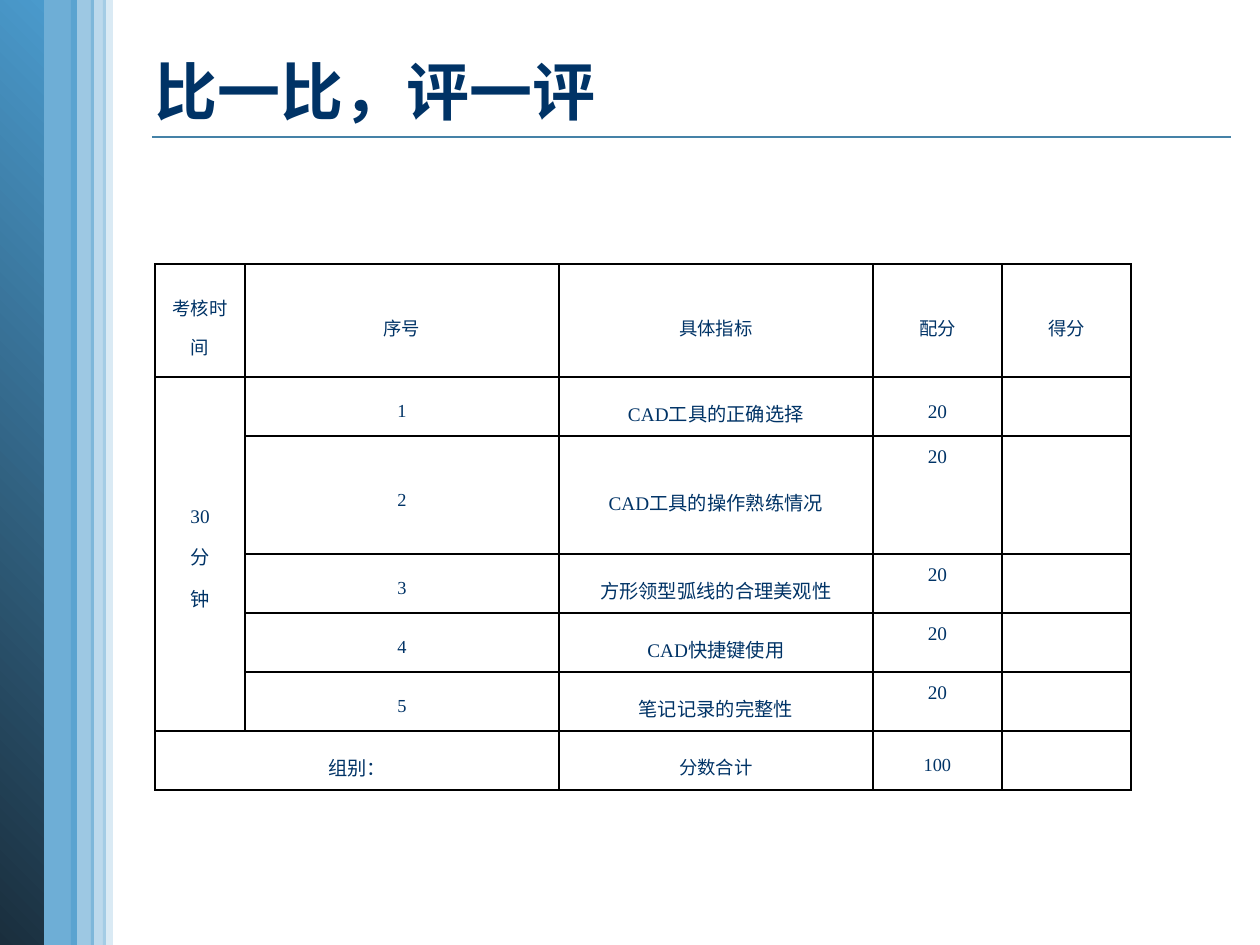
from lxml.etree import SubElement
from pptx import Presentation
from pptx.dml.color import RGBColor
from pptx.enum.shapes import MSO_CONNECTOR, MSO_SHAPE
from pptx.enum.text import MSO_ANCHOR, MSO_AUTO_SIZE, PP_ALIGN
from pptx.oxml.ns import qn
from pptx.util import Pt

EMU_PER_PX = 914400 / 126
COLORS = {"text": "003366", "blue": "4A9ACC", "dark": "1A2E3D",
          "rule": "4582A7", "border": "000000", "cell": "FFFFFF"}


def px(length):
    return round(length * EMU_PER_PX)


def rgb(name):
    return RGBColor.from_string(COLORS[name])


class SlideBuilder:
    title_font = "Arial"
    table_font = "Times New Roman"

    def __init__(self, slide):
        self.slide = slide

    def rule(self, left, right, y):
        line = self.slide.shapes.add_connector(
            MSO_CONNECTOR.STRAIGHT, px(left), px(y), px(right), px(y))
        line.line.color.rgb = rgb("rule")
        line.line.width = Pt(1)
        SubElement(line._element.spPr, qn("a:effectLst"))

    def stripe(self, left, width, opacity=None):
        """A full-height band: translucent blue, or a gradient without opacity."""
        shape = self.slide.shapes.add_shape(
            MSO_SHAPE.RECTANGLE, px(left), 0, px(width), px(945))
        shape.shadow.inherit = False
        shape.line.fill.background()
        fill = shape.fill
        if opacity is None:
            fill.gradient()
            fill.gradient_angle = 45
            for stop, name in zip(fill.gradient_stops, ("dark", "blue")):
                stop.color.rgb = rgb(name)
        else:
            fill.solid()
            fill.fore_color.rgb = rgb("blue")
            color = shape._element.spPr.find(".//" + qn("a:srgbClr"))
            SubElement(color, qn("a:alpha"), val=str(opacity * 1000))

    def title(self, text, left, top, width, height):
        title = self.slide.shapes.title
        title.left, title.top = px(left), px(top)
        title.width, title.height = px(width), px(height)
        frame = title.text_frame
        frame.text = text
        frame.auto_size = MSO_AUTO_SIZE.NONE
        frame.vertical_anchor = MSO_ANCHOR.MIDDLE
        frame.margin_top, frame.margin_bottom = 0, px(84)
        paragraph = frame.paragraphs[0]
        paragraph.alignment = PP_ALIGN.LEFT
        font = paragraph.font
        font.name, font.size, font.bold = self.title_font, Pt(36), True
        font.color.rgb = rgb("text")

    def table(self, left, top, columns, rows):
        shape = self.slide.shapes.add_table(
            len(rows), len(columns), px(left), px(top),
            px(sum(columns)), px(sum(rows)))
        table = shape.table
        table.first_row = table.horz_banding = False
        for column, width in zip(table.columns, columns):
            column.width = px(width)
        for row, height in zip(table.rows, rows):
            row.height = px(height)
        for cell in table.iter_cells():
            self.style_cell(cell)
        return table

    def style_cell(self, cell):
        cell.margin_left = cell.margin_right = px(9)
        cell.margin_top = cell.margin_bottom = 0
        properties = cell._tc.get_or_add_tcPr()
        for side in ("a:lnL", "a:lnR", "a:lnT", "a:lnB"):
            border = SubElement(properties, qn(side), w=str(Pt(1)))
            fill = SubElement(border, qn("a:solidFill"))
            SubElement(fill, qn("a:srgbClr"), val=COLORS["border"])
        cell.fill.solid()
        cell.fill.fore_color.rgb = rgb("cell")

    def cell_text(self, cell, text, size, anchor=MSO_ANCHOR.MIDDLE):
        cell.text = text
        cell.vertical_anchor = anchor
        for paragraph in cell.text_frame.paragraphs:
            paragraph.alignment = PP_ALIGN.CENTER
            paragraph.line_spacing = 1.5
            font = paragraph.font
            font.name, font.size, font.bold = self.table_font, Pt(size), False
            font.color.rgb = rgb("text")


def main():
    presentation = Presentation()
    presentation.slide_width, presentation.slide_height = px(1260), px(945)
    slide = presentation.slides.add_slide(presentation.slide_layouts[5])
    builder = SlideBuilder(slide)

    # Side bands and title rule
    builder.rule(152, 1231, 137)
    for band in ((38, 39, 80), (-1, 45), (103, 10, 20), (71, 23, 54), (91, 15, 37)):
        builder.stripe(*band)

    # Title
    builder.title("比一比，评一评", 142, 62, 1096, 140)

    # Scoring table
    table = builder.table(155, 264, (90, 314, 314, 129, 129),
                          (113, 59, 118, 59, 59, 59, 59))
    table.cell(1, 0).merge(table.cell(5, 0))
    table.cell(6, 0).merge(table.cell(6, 1))

    headings = ("考核时间", "序号", "具体指标", "配分", "得分")
    for column, heading in enumerate(headings):
        builder.cell_text(table.cell(0, column), heading, 10.5)

    builder.cell_text(table.cell(1, 0), "30\n分\n钟", 11)
    criteria = ("CAD工具的正确选择", "CAD工具的操作熟练情况",
                "方形领型弧线的合理美观性", "CAD快捷键使用", "笔记记录的完整性")
    for row, criterion in enumerate(criteria, start=1):
        builder.cell_text(table.cell(row, 1), str(row), 10.5)
        builder.cell_text(table.cell(row, 2), criterion, 11)
        anchor = MSO_ANCHOR.MIDDLE if row == 1 else MSO_ANCHOR.TOP
        builder.cell_text(table.cell(row, 3), "20", 11, anchor)

    # Totals row
    builder.cell_text(table.cell(6, 0), "组别：", 11)
    builder.cell_text(table.cell(6, 2), "分数合计", 10.5)
    builder.cell_text(table.cell(6, 3), "100", 10.5)

    presentation.save("out.pptx")


if __name__ == "__main__":
    main()
